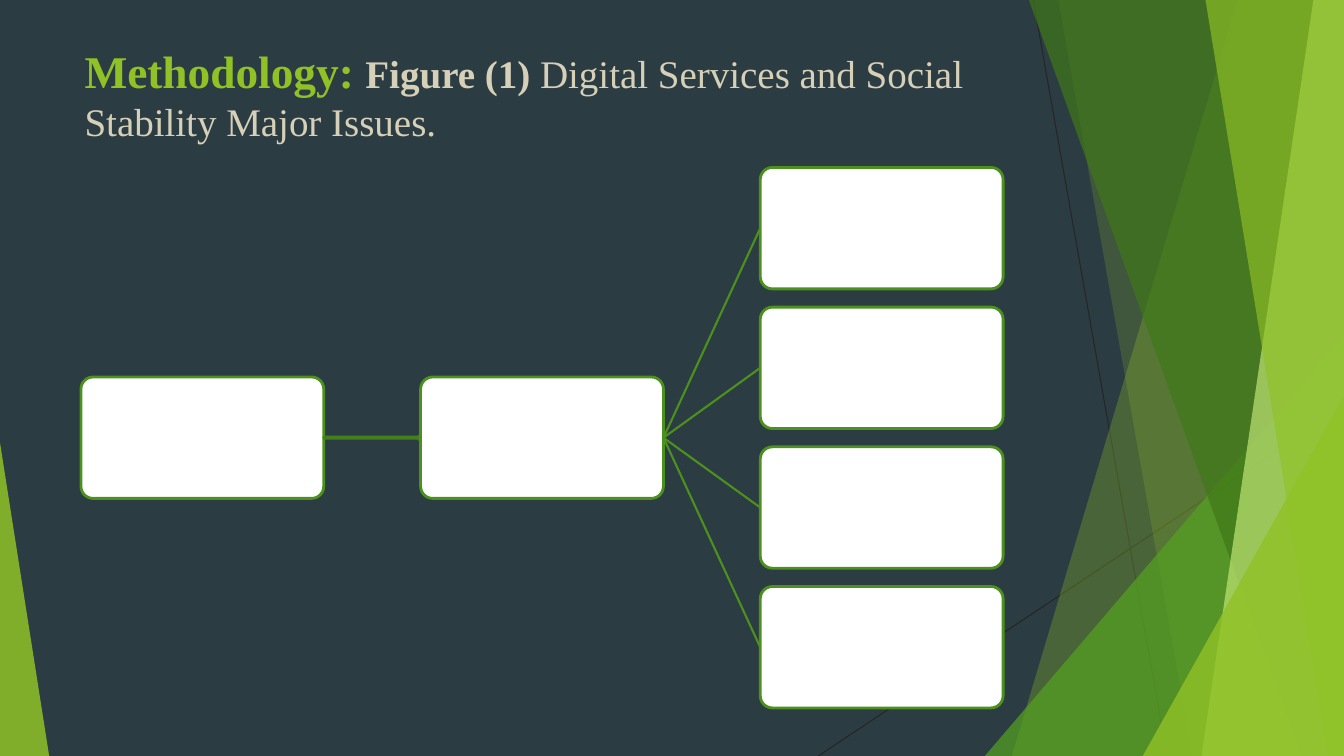
from pptx import Presentation
from pptx.dml.color import RGBColor
from pptx.enum.shapes import MSO_CONNECTOR, MSO_SHAPE
from pptx.enum.text import MSO_ANCHOR, MSO_AUTO_SIZE, PP_ALIGN
from pptx.oxml.ns import qn
from pptx.oxml.xmlchemy import OxmlElement
from pptx.util import Cm, Pt

STRAIGHT = MSO_CONNECTOR.STRAIGHT
TRIANGLE = MSO_SHAPE.ISOSCELES_TRIANGLE
ROUNDED = MSO_SHAPE.ROUNDED_RECTANGLE
ARROW = MSO_SHAPE.RIGHT_ARROW

SLATE = RGBColor(0x2C, 0x3C, 0x43)
DARK = RGBColor(0x26, 0x26, 0x26)
LIME = RGBColor(0x90, 0xC2, 0x26)
GREEN = RGBColor(0x54, 0xA0, 0x21)
FOREST = RGBColor(0x3F, 0x78, 0x19)
PALE = RGBColor(0xC0, 0xE4, 0x74)
EDGE = RGBColor(0x4C, 0x91, 0x1E)
ARROW_GREEN = RGBColor(0x43, 0x80, 0x1A)
SAND = RGBColor(0xD6, 0xD0, 0xB8)
WHITE = RGBColor(0xFF, 0xFF, 0xFF)

WIDTH, HEIGHT = 33.87, 19.05
FONT = "Times New Roman"


def paint(sp, fill, alpha=100, line=None, weight=0):
    """Set fill, opacity in percent, and outline of a shape."""
    sp.shadow.inherit = False
    sp.fill.solid()
    sp.fill.fore_color.rgb = fill
    if alpha < 100:
        opacity = OxmlElement("a:alpha")
        opacity.set("val", str(alpha * 1000))
        sp.element.spPr.find(qn("a:solidFill"))[0].append(opacity)
    if line is None:
        sp.line.fill.background()
    else:
        sp.line.color.rgb = line
        sp.line.width = Pt(weight)


def add_line(s, start, end, color, weight):
    points = [Cm(v) for v in (*start, *end)]
    sp = s.shapes.add_connector(STRAIGHT, *points)
    sp.line.color.rgb = color
    sp.line.width = Pt(weight)
    sp.element.spPr.append(OxmlElement("a:effectLst"))


def add_band(s, upper, lower, top, right, bottom, color, alpha):
    """Band with a slanted left edge that reaches the right side."""
    outline = [(upper, top), (right, top), (right, bottom), (lower, bottom)]
    points = [(Cm(x), Cm(y)) for x, y in outline]
    builder = s.shapes.build_freeform(*points[0])
    builder.add_line_segments(points[1:], close=True)
    paint(builder.convert_to_shape(), color, alpha)


def add_corner(s, left, top, right, bottom, apex, color, alpha):
    """Right-angled triangle standing on the bottom edge."""
    sp = s.shapes.add_shape(TRIANGLE, Cm(left), Cm(top),
                            Cm(right - left), Cm(bottom - top))
    sp.adjustments[0] = apex
    paint(sp, color, alpha)


def add_facets(s, left, top, width, height):
    right, bottom = left + width, top + height

    # Thin crossing lines
    add_line(s, (left + 26.04, top), (left + 29.41, bottom), DARK, 0.75)
    add_line(s, (right, top + 10.24), (left + 20.62, bottom), DARK, 0.75)

    # Translucent bands and corners, from back to front
    def bands(rows):
        for upper, lower, color, alpha in rows:
            add_band(s, left + upper, left + lower, top, right, bottom,
                     color, alpha)

    bands([(31.19, 25.5, LIME, 30), (26.67, 30.05, LIME, 20)])
    add_corner(s, left + 24.82, top + 8.46, right, bottom, 1, GREEN, 72)
    bands([(25.93, 32.79, FOREST, 70), (33.1, 30.28, PALE, 70),
           (30.38, 33.48, LIME, 65)])
    add_corner(s, left + 28.8, top + 9.98, right, bottom, 1, LIME, 80)
    add_corner(s, left, top + 11.15, left + 1.24, bottom, 0, LIME, 85)


def add_title(s, left, top, width, height):
    title = s.shapes.title
    title.element.getparent().append(title.element)  # in front of the facets
    title.left, title.top = Cm(left), Cm(top)
    title.width, title.height = Cm(width), Cm(height)
    tf = title.text_frame
    frame = {"word_wrap": True, "auto_size": MSO_AUTO_SIZE.NONE,
             "vertical_anchor": MSO_ANCHOR.TOP, "margin_top": Cm(0.23),
             "margin_left": Cm(0.25), "margin_right": Cm(0.25)}
    for name, value in frame.items():
        setattr(tf, name, value)
    p = tf.paragraphs[0]
    p.alignment = PP_ALIGN.LEFT
    p.line_spacing = 1.0
    runs = [
        ("Methodology: ", LIME, {"size": Pt(32.4), "bold": True}),
        ("Figure (1)", SAND, {"size": Pt(27.9), "bold": True}),
        (" Digital Services and Social Stability Major Issues.", SAND,
         {"size": Pt(27.9), "bold": False}),
    ]
    for text, color, style in runs:
        r = p.add_run()
        r.text = text
        r.font.name = FONT
        r.font.color.rgb = color
        for name, value in style.items():
            setattr(r.font, name, value)


def add_tree(s, left, top, width, height):
    """Root box, hub box and four branch boxes, joined from left to right."""
    box_w, box_h, branches = 6.12, 3.06, 4
    step_x = (width - box_w) / 2
    step_y = (height - box_h) / (branches - 1)
    root_x, hub_x, branch_x = (left + i * step_x for i in range(3))
    middle = top + height / 2

    def add_box(x, y):
        sp = s.shapes.add_shape(ROUNDED, Cm(x), Cm(y), Cm(box_w), Cm(box_h))
        sp.adjustments[0] = 0.1
        paint(sp, WHITE, line=EDGE, weight=2)

    # Root, arrow and hub
    add_box(root_x, middle - box_h / 2)
    arrow = s.shapes.add_shape(ARROW, Cm(root_x + box_w), Cm(middle - 0.05),
                               Cm(step_x - box_w), Cm(0.1))
    paint(arrow, ARROW_GREEN, line=ARROW_GREEN, weight=1.5)
    add_box(hub_x, middle - box_h / 2)

    # Branches
    for i in range(branches):
        y = top + i * step_y
        add_line(s, (hub_x + box_w, middle), (branch_x, y + box_h / 2),
                 EDGE, 1.5)
        add_box(branch_x, y)


def main():
    prs = Presentation()
    prs.slide_width, prs.slide_height = Cm(WIDTH), Cm(HEIGHT)
    s = prs.slides.add_slide(prs.slide_layouts.get_by_name("Title Only"))
    s.background.fill.solid()
    s.background.fill.fore_color.rgb = SLATE
    add_facets(s, 0, 0, WIDTH, HEIGHT)
    add_title(s, 1.88, 0.86, 23.88, 3.02)
    add_tree(s, 2.04, 4.22, 23.24, 13.62)
    prs.save("out.pptx")


if __name__ == "__main__":
    main()
